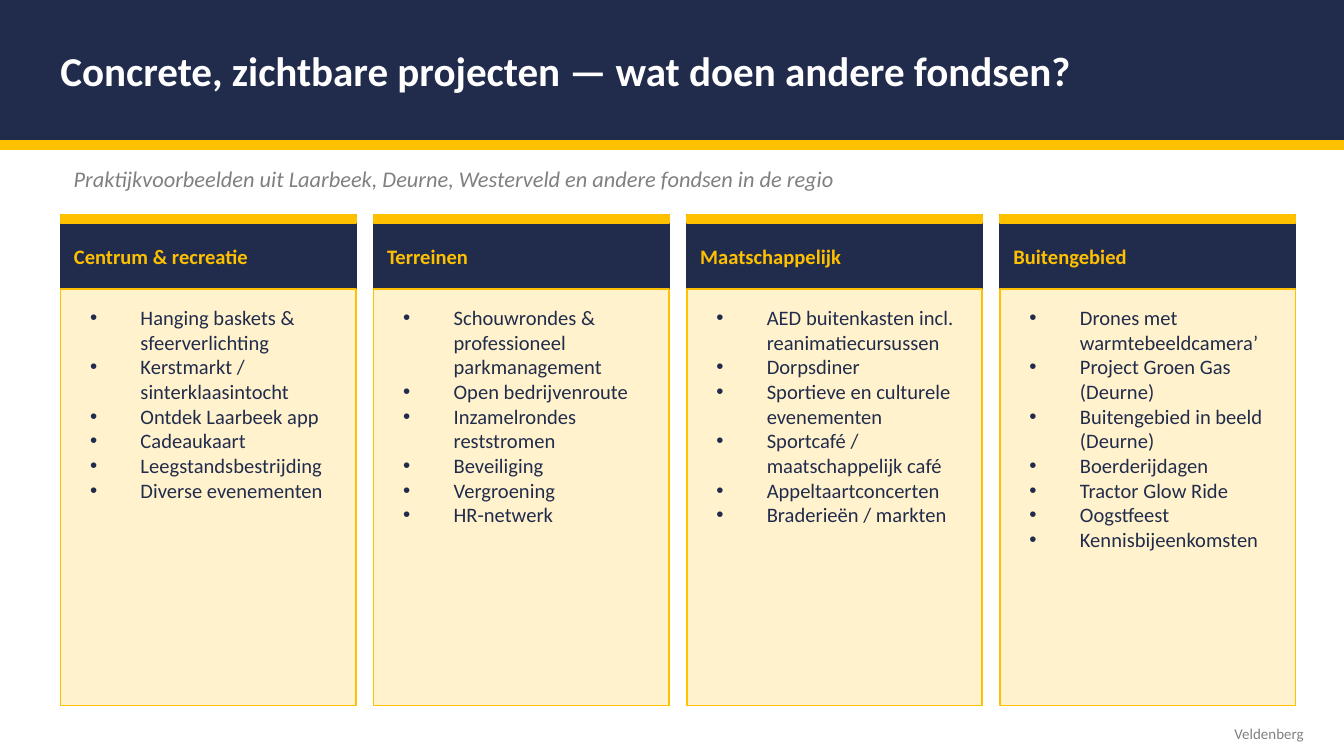
from dataclasses import dataclass

from lxml.etree import SubElement
from pptx import Presentation
from pptx.dml.color import RGBColor
from pptx.enum.shapes import MSO_SHAPE
from pptx.enum.text import MSO_ANCHOR, MSO_AUTO_SIZE, PP_ALIGN
from pptx.oxml.ns import qn
from pptx.util import Pt

NAVY, GOLD, CREAM, GREY, WHITE = "212C4C", "FFC000", "FFF2CC", "808080", "FFFFFF"
FONT = "Calibri"
PAGE_WIDTH, PAGE_HEIGHT = 720, 405
MARGIN, STRIPE = 32.4, 4.32
COLUMN_WIDTH, COLUMN_PITCH = 158.4, 167.76
HEADER_TOP, HEADER_HEIGHT, PANEL_HEIGHT = 115.2, 39.6, 223.2
BULLET_INDENT = 27


@dataclass
class Box:
    left: float
    top: float
    width: float
    height: float


@dataclass
class Style:
    size: float
    color: str
    bold: bool = False
    italic: bool = False
    align: PP_ALIGN = PP_ALIGN.LEFT


@dataclass
class Column:
    heading: str
    projects: list[str]


COLUMNS = [
    Column("Centrum & recreatie", [
        "Hanging baskets & sfeerverlichting", "Kerstmarkt / sinterklaasintocht",
        "Ontdek Laarbeek app", "Cadeaukaart", "Leegstandsbestrijding",
        "Diverse evenementen"]),
    Column("Terreinen", [
        "Schouwrondes & professioneel parkmanagement", "Open bedrijvenroute",
        "Inzamelrondes reststromen", "Beveiliging", "Vergroening", "HR-netwerk"]),
    Column("Maatschappelijk", [
        "AED buitenkasten incl. reanimatiecursussen", "Dorpsdiner",
        "Sportieve en culturele evenementen", "Sportcafé / maatschappelijk café",
        "Appeltaartconcerten", "Braderieën / markten"]),
    Column("Buitengebied", [
        "Drones met warmtebeeldcamera’", "Project Groen Gas (Deurne)",
        "Buitengebied in beeld (Deurne)", "Boerderijdagen", "Tractor Glow Ride",
        "Oogstfeest", "Kennisbijeenkomsten"]),
]


def rgb(color: str) -> RGBColor:
    return RGBColor.from_string(color)


def add_rectangle(page, box: Box, fill: str, line: str) -> None:
    shape = page.shapes.add_shape(MSO_SHAPE.RECTANGLE, Pt(box.left), Pt(box.top),
                                  Pt(box.width), Pt(box.height))
    shape.shadow.inherit = False
    shape.fill.solid()
    shape.fill.fore_color.rgb = rgb(fill)
    shape.line.color.rgb = rgb(line)
    shape.line.width = Pt(1)


def add_bullet(para) -> None:
    properties = para._p.get_or_add_pPr()
    properties.set("marL", str(Pt(BULLET_INDENT)))
    properties.set("indent", str(-Pt(BULLET_INDENT)))
    SubElement(properties, qn("a:buChar")).set("char", "•")


def write_lines(frame, lines: list[str], style: Style, bulleted: bool = False) -> None:
    for number, line in enumerate(lines):
        para = frame.add_paragraph() if number else frame.paragraphs[0]
        para.alignment = style.align
        para.space_before = Pt(0)
        if bulleted:
            add_bullet(para)
        span = para.add_run()
        span.text = line
        span.font.name = FONT
        span.font.size = Pt(style.size)
        span.font.bold = style.bold
        span.font.italic = style.italic
        span.font.color.rgb = rgb(style.color)


def set_frame(frame, anchor: MSO_ANCHOR, inset: bool) -> None:
    frame.word_wrap = True
    frame.auto_size = MSO_AUTO_SIZE.NONE
    frame.vertical_anchor = anchor
    frame.margin_left = frame.margin_right = Pt(7.2 if inset else 0)
    frame.margin_top = frame.margin_bottom = Pt(3.6 if inset else 0)


def add_label(page, box: Box, text: str, style: Style, inset: bool = True) -> None:
    label = page.shapes.add_textbox(Pt(box.left), Pt(box.top), Pt(box.width), Pt(box.height))
    set_frame(label.text_frame, MSO_ANCHOR.MIDDLE, inset)
    write_lines(label.text_frame, [text], style)


def place(holder, box: Box) -> None:
    """Position a placeholder and bring it in front of the shapes drawn so far."""
    holder.left, holder.top = Pt(box.left), Pt(box.top)
    holder.width, holder.height = Pt(box.width), Pt(box.height)
    holder.element.getparent().append(holder.element)


def add_column(page, holder, left: float, column: Column) -> None:
    panel_top = HEADER_TOP + HEADER_HEIGHT
    # Header with gold stripe
    add_rectangle(page, Box(left, HEADER_TOP, COLUMN_WIDTH, HEADER_HEIGHT), NAVY, NAVY)
    add_rectangle(page, Box(left, HEADER_TOP, COLUMN_WIDTH, STRIPE), GOLD, GOLD)
    heading_box = Box(left + 7.2, HEADER_TOP + STRIPE, 147.6, HEADER_HEIGHT - STRIPE)
    add_label(page, heading_box, column.heading, Style(11, GOLD, bold=True), inset=False)
    # Panel with project list
    add_rectangle(page, Box(left, panel_top, COLUMN_WIDTH, PANEL_HEIGHT), CREAM, GOLD)
    place(holder, Box(left + 8.64, panel_top + 5.04, 144, 212.4))
    set_frame(holder.text_frame, MSO_ANCHOR.TOP, inset=True)
    write_lines(holder.text_frame, column.projects, Style(11, NAVY), bulleted=True)


def main() -> None:
    deck = Presentation()
    deck.slide_width, deck.slide_height = Pt(PAGE_WIDTH), Pt(PAGE_HEIGHT)
    # The comparison layout offers a title and four body placeholders
    page = deck.slides.add_slide(deck.slide_layouts.get_by_name("Comparison"))
    title, *lists = list(page.placeholders)

    # Title band
    add_rectangle(page, Box(0, 0, PAGE_WIDTH, 75.6), NAVY, NAVY)
    add_rectangle(page, Box(0, 75.6, PAGE_WIDTH, STRIPE), GOLD, GOLD)
    place(title, Box(MARGIN, 5.76, 655.2, 64.08))
    set_frame(title.text_frame, MSO_ANCHOR.MIDDLE, inset=False)
    write_lines(title.text_frame, ["Concrete, zichtbare projecten — wat doen andere fondsen?"],
                Style(22, WHITE, bold=True))

    # Footer and subtitle
    add_label(page, Box(561.6, 385.2, 144, 15.84), "Veldenberg",
              Style(8, GREY, align=PP_ALIGN.RIGHT))
    add_label(page, Box(MARGIN, 82.8, 655.2, 25.2),
              "Praktijkvoorbeelden uit Laarbeek, Deurne, Westerveld en andere fondsen in de regio",
              Style(12, GREY, italic=True))

    # Project columns
    for number, (holder, column) in enumerate(zip(lists, COLUMNS)):
        add_column(page, holder, MARGIN + number * COLUMN_PITCH, column)

    deck.save("out.pptx")


if __name__ == "__main__":
    main()
